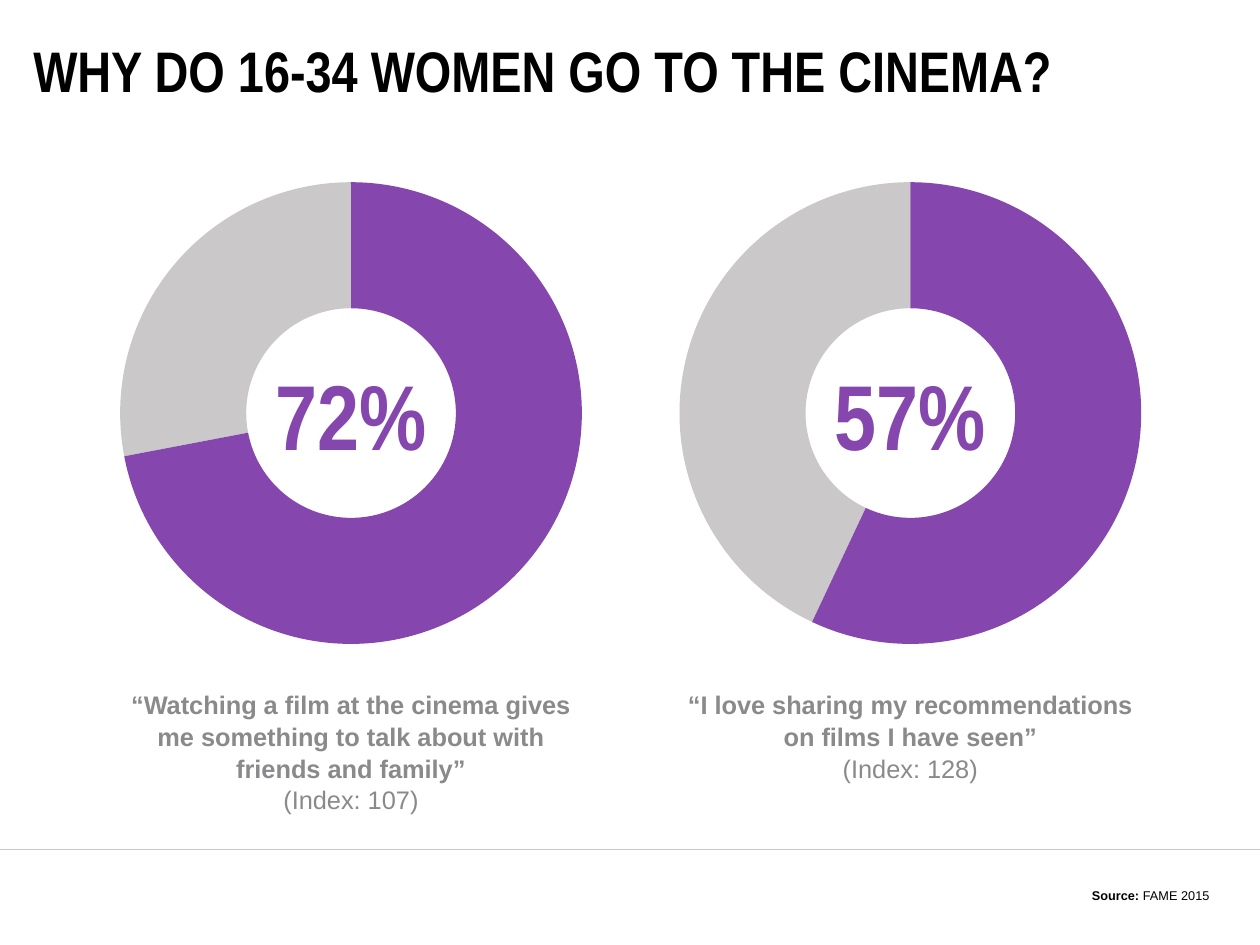
from lxml import etree
from pptx import Presentation
from pptx.dml.color import RGBColor
from pptx.enum import shapes, text
from pptx.oxml import ns
from pptx.util import Cm, Pt

# Content
TITLE = "WHY DO 16-34 WOMEN GO TO THE CINEMA?"
REASONS = [
    {"percent": 72, "index": 107, "caption_height": 3.1,
     "quote": "“Watching a film at the cinema gives me something to talk about "
              "with friends and family”"},
    {"percent": 57, "index": 128, "caption_height": 2.39,
     "quote": "“I love sharing my recommendations on films I have seen”"},
]
SOURCE = [("Source: ", True), ("FAME 2015", False)]

# Colours and fonts
PURPLE = RGBColor(0x85, 0x47, 0xAD)
SILVER = RGBColor(0xCA, 0xC8, 0xC8)
GREY = RGBColor(0x8A, 0x8A, 0x8D)
BLACK = RGBColor(0, 0, 0)
NARROW, BODY = "Arial Narrow", "Arial"

# Layout in centimetres
PAGE_WIDTH, PAGE_HEIGHT = 28, 21
FIRST_CENTRE, PITCH = 7.8, 12.43
RING_TOP, RING_SIZE, RING_THICKNESS = 4.05, 10.26, 0.273
VALUE_TOP, VALUE_WIDTH, VALUE_HEIGHT = 7.82, 5.64, 2.74
CAPTION_TOP, CAPTION_WIDTH = 15.16, 10.97
RULE_TOP = 18.87

deck = Presentation()
deck.slide_width, deck.slide_height = Cm(PAGE_WIDTH), Cm(PAGE_HEIGHT)
page = deck.slides.add_slide(deck.slide_layouts[6])


def add_text(paragraphs, left, top, width, height, *, size, color, font=BODY,
             align=text.PP_ALIGN.CENTER, anchor=text.MSO_ANCHOR.TOP,
             spacing=None, inset=True):
    """Add a text box; each paragraph is a list of (words, bold) pairs."""
    box = page.shapes.add_textbox(Cm(left), Cm(top), Cm(width), Cm(height))
    frame = box.text_frame
    frame.word_wrap = True
    frame.vertical_anchor = anchor
    if not inset:
        frame.margin_left = frame.margin_right = 0
        frame.margin_top = frame.margin_bottom = 0
    for number, spans in enumerate(paragraphs):
        para = frame.add_paragraph() if number else frame.paragraphs[0]
        para.alignment = align
        if spacing:
            para.line_spacing = Pt(spacing)
        for words, bold in spans:
            span = para.add_run()
            span.text = words
            span.font.name, span.font.size = font, Pt(size)
            span.font.bold = bold
            span.font.color.rgb = color


def add_arc(left, start, end, color):
    """Add a ring segment; angles run clockwise in degrees from the top."""
    arc = page.shapes.add_shape(shapes.MSO_SHAPE.BLOCK_ARC, Cm(left), Cm(RING_TOP),
                                Cm(RING_SIZE), Cm(RING_SIZE))
    arc.shadow.inherit = False
    arc.rotation = 90
    arc.adjustments[0] = (180 + start) % 360 * 0.6
    arc.adjustments[1] = (180 + end) % 360 * 0.6
    arc.adjustments[2] = RING_THICKNESS
    arc.fill.solid()
    arc.fill.fore_color.rgb = color
    arc.line.fill.background()


# Rule above the footer
rule = page.shapes.add_connector(shapes.MSO_CONNECTOR.STRAIGHT, 0, Cm(RULE_TOP),
                                 Cm(PAGE_WIDTH), Cm(RULE_TOP))
rule.line.color.rgb = SILVER
rule.line.width = Pt(0.5)
etree.SubElement(rule._element.spPr, ns.qn("a:effectLst"))

# Title
add_text([[(TITLE, True)]], 0.74, 0.97, 25.86, 1.14, size=36, color=BLACK,
         font=NARROW, align=text.PP_ALIGN.LEFT, anchor=text.MSO_ANCHOR.MIDDLE,
         inset=False)

# Rings with value and caption
for column, reason in enumerate(REASONS):
    centre = FIRST_CENTRE + column * PITCH
    sweep = reason["percent"] * 3.6
    ring_left = centre - RING_SIZE / 2
    add_arc(ring_left, sweep, 360, SILVER)
    add_arc(ring_left, 0, sweep, PURPLE)
    add_text([[(f"{reason['percent']}%", True)]], centre - VALUE_WIDTH / 2,
             VALUE_TOP, VALUE_WIDTH, VALUE_HEIGHT, size=58, color=PURPLE,
             font=NARROW, anchor=text.MSO_ANCHOR.MIDDLE)
    add_text([[(reason["quote"], True)], [(f"(Index: {reason['index']})", False)]],
             centre - CAPTION_WIDTH / 2, CAPTION_TOP, CAPTION_WIDTH,
             reason["caption_height"], size=16, color=GREY, spacing=20)

# Source
add_text([SOURCE], 12.22, 19.58, 14.91, 0.61, size=8, color=BLACK,
         align=text.PP_ALIGN.RIGHT, anchor=text.MSO_ANCHOR.BOTTOM)

deck.save("out.pptx")
